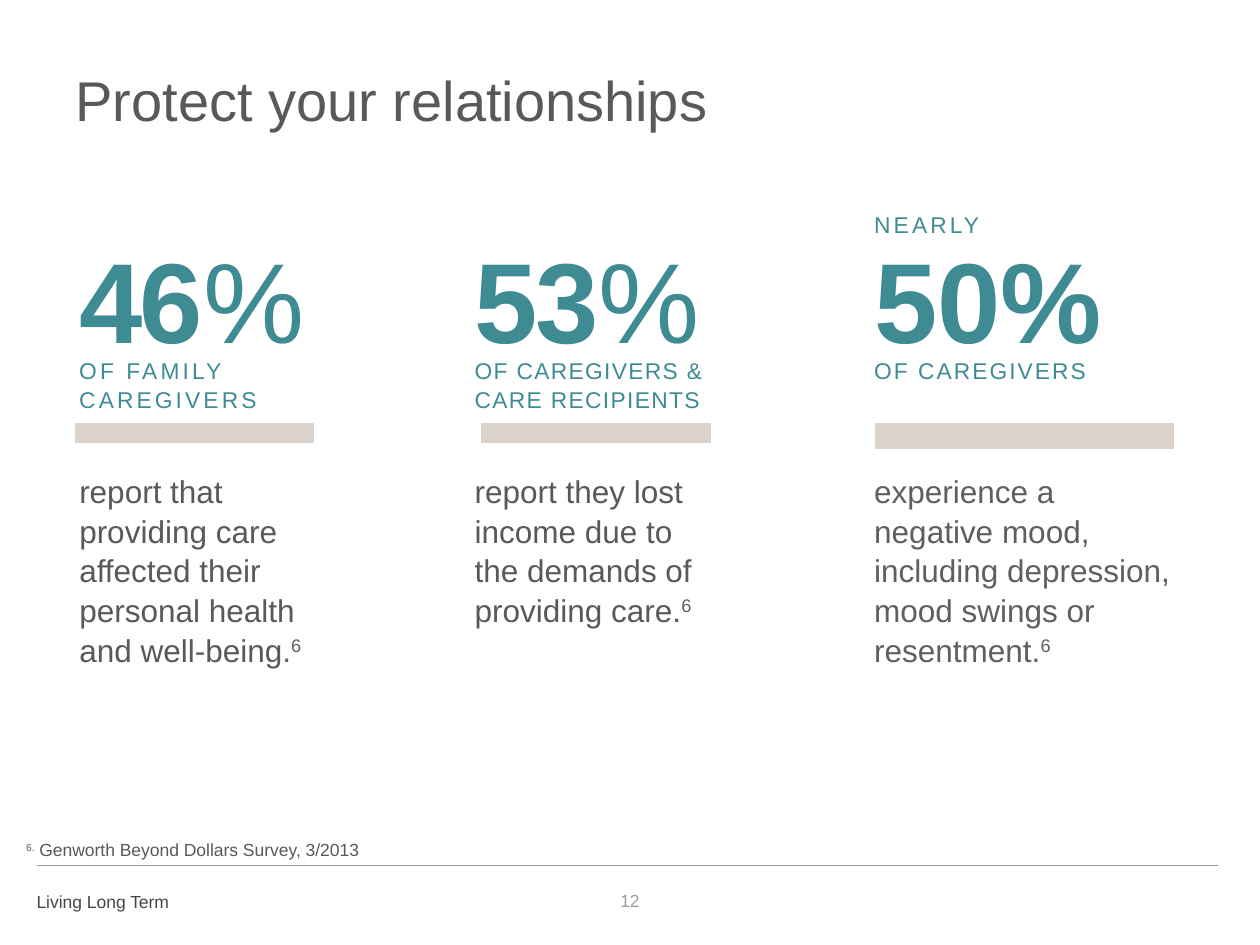
"""Build the "Protect your relationships" slide with three caregiver statistics."""
import pptx
import pptx.dml.color
import pptx.enum.shapes
import pptx.enum.text
import pptx.oxml.ns
import pptx.util
from lxml import etree

Pt = pptx.util.Pt
ALIGN = pptx.enum.text.PP_ALIGN
ANCHOR = pptx.enum.text.MSO_ANCHOR
COLORS = {"teal": "3E8B94", "gray": "58595B", "body": "5F5F5F", "bar": "DAD3CC",
          "rule": "999999", "footer": "454648", "number": "9A9B9B"}


def rgb(name):
    return pptx.dml.color.RGBColor.from_string(COLORS[name])


def write(shape, box, paragraphs, size, color, anchor=ANCHOR.TOP, align=ALIGN.LEFT, leading=1.0):
    """Place a text shape and fill it with paragraphs of (text, options) runs."""
    shape.left, shape.top, shape.width, shape.height = [Pt(length) for length in box]
    frame = shape.text_frame
    frame.word_wrap = True
    frame.auto_size = pptx.enum.text.MSO_AUTO_SIZE.NONE
    frame.vertical_anchor = anchor
    for index, runs in enumerate(paragraphs):
        paragraph = frame.add_paragraph() if index else frame.paragraphs[0]
        paragraph.alignment = align
        paragraph.line_spacing = leading
        paragraph.space_before = Pt(0)
        for text, options in runs:
            if text == "\n":
                paragraph.add_line_break()
                continue
            run = paragraph.add_run()
            run.text = text
            run.font.name = "Arial"
            run.font.size = Pt(size)
            run.font.bold = options.get("bold", False)
            run.font.color.rgb = rgb(options.get("color", color))
            properties = run._r.get_or_add_rPr()
            if "spacing" in options:
                properties.set("spc", str(round(options["spacing"] * 100)))
            if options.get("superscript"):
                properties.set("baseline", "30000")
    return frame


deck = pptx.Presentation()
deck.slide_width, deck.slide_height = Pt(720), Pt(540)
slide = deck.slides.add_slide(deck.slide_layouts[5])
shapes = slide.shapes

write(shapes.title, (36, 34, 648, 62), [[("Protect your relationships", {})]], 32, "gray")

rule = shapes.add_connector(pptx.enum.shapes.MSO_CONNECTOR.STRAIGHT,
                            Pt(20.9), Pt(494.6), Pt(696.2), Pt(494.6))
rule.line.color.rgb = rgb("rule")
rule.line.width = Pt(1)
etree.SubElement(rule._element.spPr, pptx.oxml.ns.qn("a:effectLst"))

footer = write(shapes.add_textbox(0, 0, 0, 0), (20.9, 505.4, 283.7, 19.4),
               [[("Living Long Term", {})]], 10, "footer")
footer.margin_left = footer.margin_right = 0
write(shapes.add_textbox(0, 0, 0, 0), (7.9, 478, 681, 17.3),
      [[("6.", {"superscript": True}), (" Genworth Beyond Dollars Survey, 3/2013", {})]],
      10, "gray", ANCHOR.BOTTOM)
write(shapes.add_textbox(0, 0, 0, 0), (339, 500.4, 42, 28.8), [[("12", {})]],
      10, "number", ANCHOR.MIDDLE, ALIGN.CENTER)

tight = {"bold": True, "spacing": -1.5}
light = {"spacing": -1.5}
note = ("6", {"color": "body", "superscript": True, "spacing": 1.8})
columns = [
    {"left": 38.2, "bar": (43.2, 136.1, 10.8),
     "figure": [("46", tight), ("%", light)],
     "group": ("OF FAMILY CAREGIVERS", 1.8, 125.3),
     "finding": [[("report that providing care", {})],
                 [("affected their personal health", {})],
                 [("and well-being", {}), (".", {"color": "body"}), note]],
     "width": 159.8},
    {"left": 264.2, "bar": (275, 131, 10.8),
     "figure": [("53", tight), ("%", light)],
     "group": ("OF CAREGIVERS & CARE RECIPIENTS", 0.8, 160.6),
     "finding": [[("report they lost income due to ", {}), ("\n", {}),
                  ("the demands of providing care.", {}), note]],
     "width": 172.8},
    {"left": 492.5, "bar": (500.4, 169.9, 14.4),
     "figure": [("50%", {"bold": True})],
     "group": ("OF CAREGIVERS", 1.2, 177.8),
     "finding": [[("experience a negative mood, including depression, "
                   "mood swings or resentment.", {"color": "body"}),
                  ("6", {"color": "body", "superscript": True})]],
     "width": 188},
]
for column in columns:
    left = column["left"]
    bar_left, bar_width, bar_height = column["bar"]
    bar = shapes.add_shape(pptx.enum.shapes.MSO_SHAPE.RECTANGLE,
                           Pt(bar_left), Pt(241.9), Pt(bar_width), Pt(bar_height))
    bar.shadow.inherit = False
    bar.fill.solid()
    bar.fill.fore_color.rgb = rgb("bar")
    bar.line.color.rgb = rgb("bar")
    bar.line.width = Pt(0.75)

    write(shapes.add_textbox(0, 0, 0, 0), (left, 127.5, 162, 82), [column["figure"]], 65, "teal")
    group, spacing, group_width = column["group"]
    write(shapes.add_textbox(0, 0, 0, 0), (left, 199.8, group_width, 39),
          [[(group, {"spacing": spacing})]], 13, "teal", leading=1.05)
    write(shapes.add_textbox(0, 0, 0, 0), (left, 265, column["width"], 126),
          column["finding"], 18, "gray", leading=1.05)

write(shapes.add_textbox(0, 0, 0, 0), (492.5, 117, 125.3, 23),
      [[("NEARLY", {"spacing": 1.8})]], 13, "teal")

deck.save("out.pptx")
